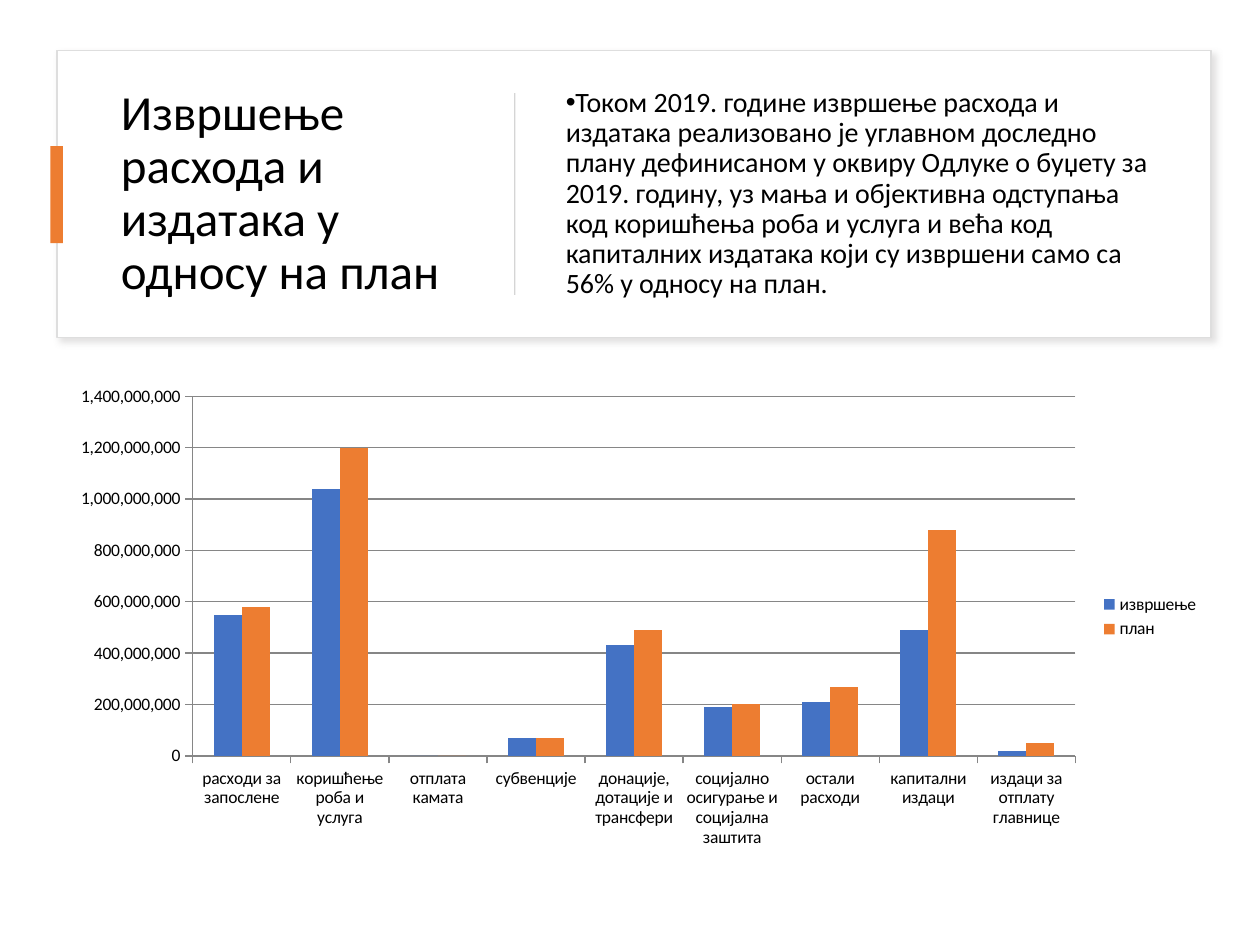
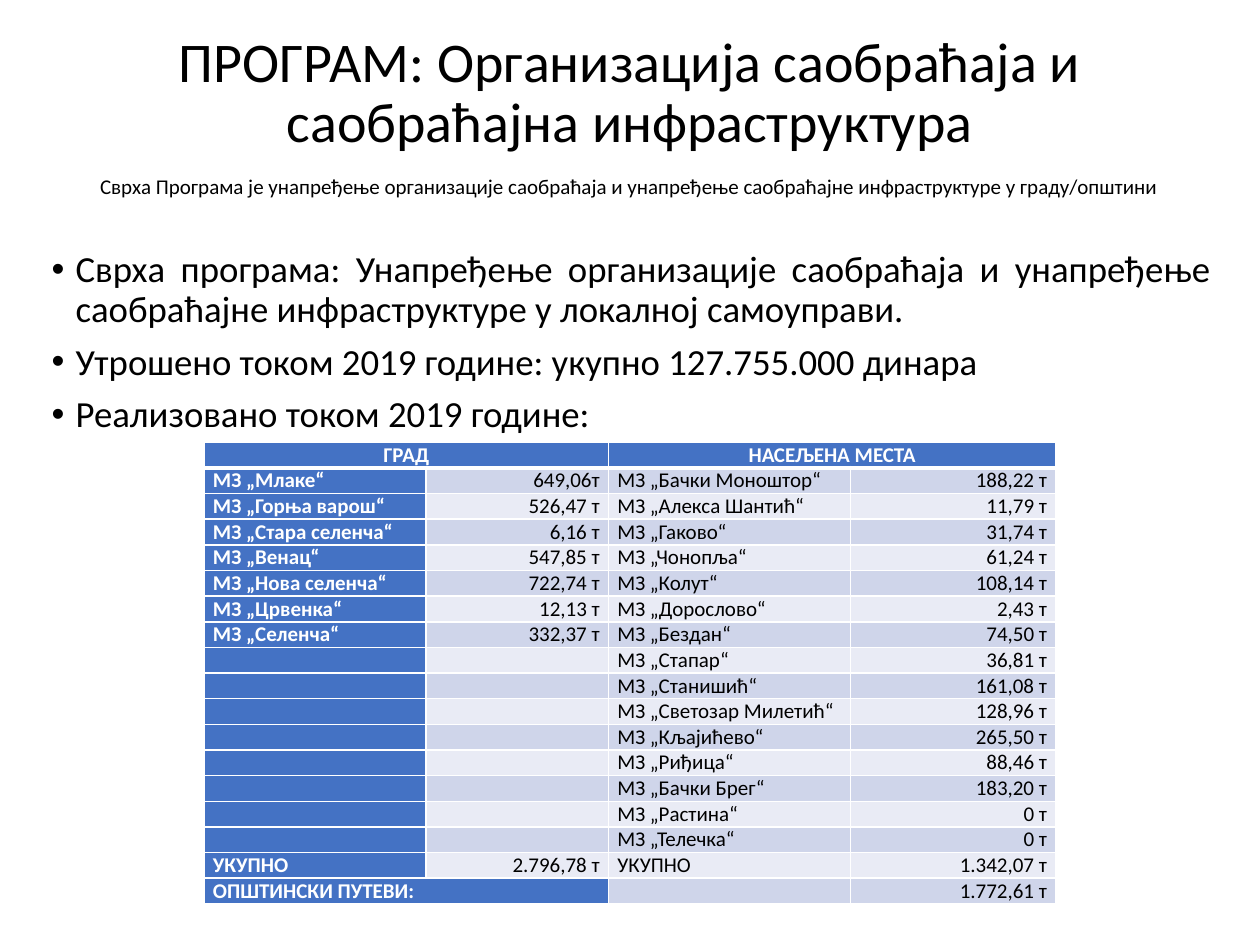
"""Build two budget slides: spending against plan, and the traffic programme."""
from itertools import zip_longest
from lxml import etree
from pptx import Presentation
from pptx.chart.data import CategoryChartData
from pptx.dml.color import RGBColor
from pptx.enum import chart as ch, shapes, text
from pptx.oxml import ns
from pptx.util import Inches, Pt

FONT = "Calibri"
BLACK = RGBColor(0, 0, 0)
WHITE = RGBColor(255, 255, 255)
BLUE = RGBColor(0x44, 0x72, 0xC4)
ORANGE = RGBColor(0xED, 0x7D, 0x31)
FRAME = RGBColor(0xDE, 0xDE, 0xDE)
RULE = RGBColor(0xD5, 0xD5, 0xD5)
GRID = RGBColor(0x86, 0x86, 0x86)
BANDS = RGBColor(0xE9, 0xEB, 0xF5), RGBColor(0xCF, 0xD5, 0xEA)
LEFT, MID, RIGHT, JUST = (text.PP_ALIGN.LEFT, text.PP_ALIGN.CENTER,
                          text.PP_ALIGN.RIGHT, text.PP_ALIGN.JUSTIFY)
TOP, CENTRE, BASE = (text.MSO_ANCHOR.TOP, text.MSO_ANCHOR.MIDDLE,
                     text.MSO_ANCHOR.BOTTOM)

PLAN_TITLE = "Извршење расхода и издатака у односу на план"
PLAN_NOTE = (
    "Током 2019. године извршење расхода и издатака реализовано је углавном "
    "доследно плану дефинисаном у оквиру Oдлуке о буџету за 2019. годину, уз "
    "мања и објективна одступања код коришћења роба и услуга и већа код "
    "капиталних издатака који су извршени само са 56% у односу на план.")
COSTS = [
    ("расходи за запослене", 550, 580),
    ("коришћење роба и услуга", 1040, 1200),
    ("отплата камата", 0, 0),
    ("субвенције", 70, 70),
    ("донације, дотације и трансфери", 430, 490),
    ("социјално осигурање и социјална заштита", 190, 200),
    ("остали расходи", 210, 270),
    ("капитални издаци", 490, 880),
    ("издаци за отплату главнице", 20, 50),
]
SERIES = [("извршење", BLUE), ("план", ORANGE)]
MILLION = 1_000_000

ROAD_TITLE = "ПРОГРАМ: Организација саобраћаја и саобраћајна инфраструктура"
ROAD_SUB = ("Сврха Програма је унапређење организације саобраћаја и "
            "унапређење саобраћајне инфраструктуре у граду/општини")
ROAD_LIST = [
    ("Сврха програма: Унапређење организације саобраћаја и унапређење "
     "саобраћајне инфраструктуре у локалној самоуправи."),
    "Утрошено током 2019 године: укупно 127.755.000 динара",
    "Реализовано током 2019 године:",
]
HEAD = ("ГРАД", "", "НАСЕЉЕНА МЕСТА", "")
TOWN = [
    ("Млаке", "649,06т"), ("Горња варош", "526,47 т"),
    ("Стара селенча", "6,16 т"), ("Венац", "547,85 т"),
    ("Нова селенча", "722,74 т"), ("Црвенка", "12,13 т"),
    ("Селенча", "332,37 т"),
]
PLACES = [
    ("Бачки Моноштор", "188,22 т"), ("Алекса Шантић", "11,79 т"),
    ("Гаково", "31,74 т"), ("Чонопља", "61,24 т"), ("Колут", "108,14 т"),
    ("Дорослово", "2,43 т"), ("Бездан", "74,50 т"), ("Стапар", "36,81 т"),
    ("Станишић", "161,08 т"), ("Светозар Милетић", "128,96 т"),
    ("Кљајићево", "265,50 т"), ("Риђица", "88,46 т"),
    ("Бачки Брег", "183,20 т"), ("Растина", "0 т"), ("Телечка", "0 т"),
]
TOTAL = ("УКУПНО", "2.796,78 т", "УКУПНО", "1.342,07 т")
ROADS = ("ОПШТИНСКИ ПУТЕВИ:", "", "", "1.772,61 т")
WIDTHS = 1.76, 1.45, 1.92, 1.63
ROW = 0.2


def add(parent, tag, **attrs):
    """Append a drawing element with the given attributes."""
    node = etree.SubElement(parent, ns.qn(tag))
    for key, val in attrs.items():
        node.set(key, str(val))
    return node


def box(left, top, width, height):
    """Turn four lengths in inches into slide units."""
    return [Inches(n) for n in (left, top, width, height)]


def place(shape, *spot):
    """Move a placeholder and return its text frame."""
    shape.left, shape.top, shape.width, shape.height = box(*spot)
    return shape.text_frame


def write(frame, items, size=12, color=BLACK, bold=False, align=LEFT,
          anchor=TOP, line=0.9, before=0, after=0, bullet=None):
    """Fill a text frame; bullet is the (margin, indent) pair in inches."""
    frame.word_wrap = True
    frame.auto_size = text.MSO_AUTO_SIZE.NONE
    frame.vertical_anchor = anchor
    for i, item in enumerate([items] if isinstance(items, str) else items):
        para = frame.add_paragraph() if i else frame.paragraphs[0]
        if bullet:
            props = para._p.get_or_add_pPr()
            props.set("marL", str(Inches(bullet[0])))
            props.set("indent", str(Inches(bullet[1])))
            add(props, "a:buFont", typeface="Arial")
            add(props, "a:buChar", char="•")
        para.alignment, para.line_spacing = align, line
        para.space_before, para.space_after = Pt(before if i else 0), Pt(after)
        run = para.add_run()
        run.text = item
        run.font.name, run.font.size, run.font.bold = FONT, Pt(size), bold
        run.font.color.rgb = color


def block(slide, spot, fill, line=None):
    """Add a plain rectangle."""
    shape = slide.shapes.add_shape(shapes.MSO_SHAPE.RECTANGLE, *box(*spot))
    shape.shadow.inherit = False
    shape.fill.solid()
    shape.fill.fore_color.rgb = fill
    if line:
        shape.line.color.rgb, shape.line.width = line, Pt(1)
    else:
        shape.line.fill.background()
    return shape


def shade(shape):
    """Give a shape a soft shadow to the lower right."""
    fx = shape._element.spPr.find(ns.qn("a:effectLst"))
    cast = add(fx, "a:outerShdw", blurRad=Pt(4), dist=Pt(3), dir=45 * 60000,
               algn="tl", rotWithShape=0)
    add(add(cast, "a:srgbClr", val="C5C3C3"), "a:alpha", val=50000)


def columns(slide, spot):
    """Add the chart of spending against plan."""
    data = CategoryChartData(number_format="#,##0")
    data.categories = [row[0] for row in COSTS]
    for i, (name, _) in enumerate(SERIES, 1):
        data.add_series(name, [row[i] * MILLION for row in COSTS])
    chart = slide.shapes.add_chart(
        ch.XL_CHART_TYPE.COLUMN_CLUSTERED, *box(*spot), data).chart
    chart.font.name, chart.font.size = FONT, Pt(10)
    chart.font.color.rgb = BLACK
    chart.has_title = False
    chart.has_legend = True
    chart.legend.position = ch.XL_LEGEND_POSITION.RIGHT
    chart.legend.include_in_layout = False
    plot = chart.plots[0]
    plot.gap_width, plot.overlap, plot.vary_by_categories = 150, 0, False
    for series, (_, color) in zip(plot.series, SERIES):
        series.format.fill.solid()
        series.format.fill.fore_color.rgb = color
    axis = chart.value_axis
    axis.minimum_scale, axis.maximum_scale = 0, 1400 * MILLION
    axis.major_unit = 200 * MILLION
    axis.has_major_gridlines = True
    axis.tick_labels.number_format = "#,##0"
    axis.tick_labels.number_format_is_linked = False
    for part in (axis, chart.category_axis):
        part.major_tick_mark = ch.XL_TICK_MARK.OUTSIDE
        part.format.line.color.rgb = GRID
    axis.major_gridlines.format.line.color.rgb = GRID


def edge(cell, head):
    """Draw white cell borders, thicker under the heading."""
    props = cell._tc.get_or_add_tcPr()
    for i, side in enumerate("LRTB"):
        width = Pt(3 if head and side == "B" else 1)
        line = etree.Element(ns.qn(f"a:ln{side}"), w=str(width))
        add(add(line, "a:solidFill"), "a:srgbClr", val=WHITE)
        props.insert(i, line)


def grid(slide, left, top):
    """Add the table of tonnes by community."""
    label = lambda pair: (f"МЗ „{pair[0]}“", pair[1]) if pair else ("", "")
    body = [label(a) + label(b) for a, b in zip_longest(TOWN, PLACES)]
    rows = [HEAD, *body, TOTAL, ROADS]
    last = len(rows) - 1
    table = slide.shapes.add_table(
        len(rows), len(WIDTHS),
        *box(left, top, sum(WIDTHS), ROW * len(rows))).table
    for col, width in zip(table.columns, WIDTHS):
        col.width = Inches(width)
    for r, row in enumerate(rows):
        table.rows[r].height = Inches(ROW)
        for c, word in enumerate(row):
            cell = table.cell(r, c)
            strong = r == 0 or c == 0 or (r == last and c == 1)
            cell.fill.solid()
            cell.fill.fore_color.rgb = BLUE if strong else BANDS[r % 2]
            cell.margin_left = cell.margin_right = Inches(0.07)
            cell.margin_top = cell.margin_bottom = 0
            edge(cell, r == 0)
            if word:
                write(cell.text_frame, word, bold=strong, line=1,
                      color=WHITE if strong else BLACK,
                      align=MID if r == 0 else RIGHT if c % 2 else LEFT)
            else:
                add(cell.text_frame.paragraphs[0]._p, "a:endParaRPr", sz=1200)
    for r, c in ((0, 0), (0, 2), (last, 0)):
        table.cell(r, c).merge(table.cell(r, c + 1))


def plan(deck):
    """Build the slide on spending against plan."""
    slide = deck.slides.add_slide(deck.slide_layouts[1])
    title, body = slide.placeholders
    panel = block(slide, (0.45, 0.4, 9.16, 2.28), WHITE, FRAME)
    shade(panel)
    slide.shapes._spTree.insert(2, panel._element)
    block(slide, (0.4, 1.16, 0.1, 0.77), ORANGE)
    block(slide, (4.08, 0.74, 0.01, 1.6), RULE)
    write(place(title, 0.86, 0.64, 2.92, 1.8), PLAN_TITLE, size=28,
          anchor=CENTRE)
    write(place(body, 4.39, 0.64, 4.92, 1.8), PLAN_NOTE, size=16,
          anchor=CENTRE, after=6, bullet=(0, -0.25))
    columns(slide, (0.46, 2.99, 9.16, 3.81))


def roads(deck):
    """Build the slide on the traffic programme."""
    slide = deck.slides.add_slide(deck.slide_layouts[1])
    title, body = slide.placeholders
    write(place(title, 0.3, 0.25, 9.4, 1.03), ROAD_TITLE, size=32, align=MID,
          anchor=BASE)
    write(place(body, 0.31, 1.94, 9.4, 4.95), ROAD_LIST, size=21, align=JUST,
          before=7.5, bullet=(0.19, -0.19))
    sub = slide.shapes.add_textbox(*box(0.46, 1.35, 9.07, 0.32))
    write(sub.text_frame, ROAD_SUB, align=MID)
    grid(slide, 1.62, 3.51)


def main():
    """Build and save the deck."""
    deck = Presentation()
    deck.slide_width, deck.slide_height = Inches(10), Inches(7.5)
    plan(deck)
    roads(deck)
    deck.save("out.pptx")


if __name__ == "__main__":
    main()
